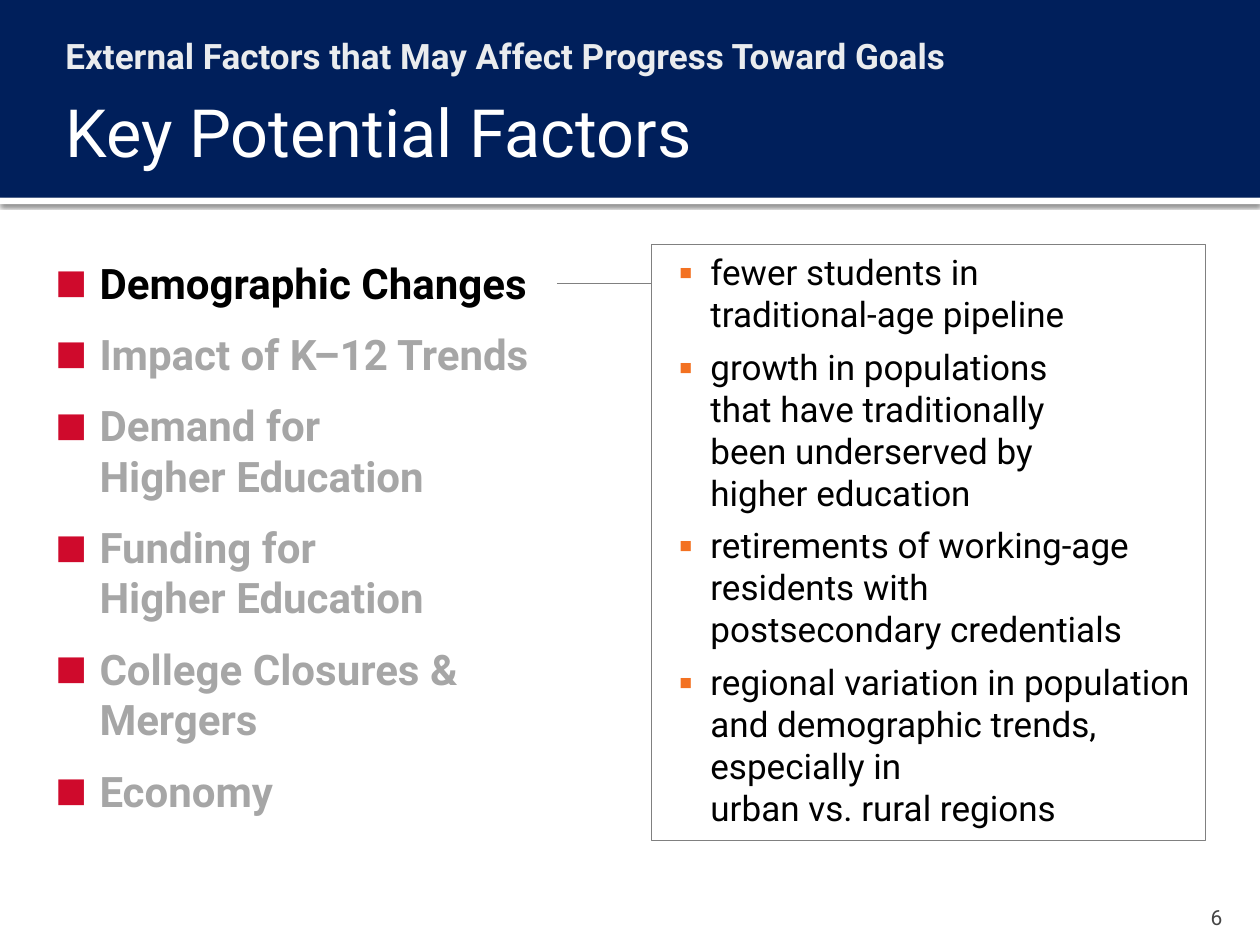
"""Build the Key Potential Factors slide."""
from dataclasses import dataclass

from lxml import etree
from pptx import Presentation
from pptx.dml.color import RGBColor
from pptx.enum.shapes import MSO_CONNECTOR, MSO_SHAPE
from pptx.enum.text import MSO_ANCHOR, MSO_AUTO_SIZE, PP_ALIGN
from pptx.oxml.ns import qn
from pptx.util import Inches, Length, Pt

RECT = MSO_SHAPE.RECTANGLE
LINE = MSO_CONNECTOR.STRAIGHT
TOP, MIDDLE, BOTTOM = MSO_ANCHOR.TOP, MSO_ANCHOR.MIDDLE, MSO_ANCHOR.BOTTOM
LEFT, RIGHT = PP_ALIGN.LEFT, PP_ALIGN.RIGHT
GROW = MSO_AUTO_SIZE.SHAPE_TO_FIT_TEXT


@dataclass(frozen=True)
class Theme:
    """Colours and type sizes of the slide."""
    font: str = "Roboto"
    navy: str = "001F5B"
    white: str = "FFFFFF"
    black: str = "000000"
    pale: str = "EAECEE"
    muted: str = "A6A6A6"
    dark: str = "454545"
    rule: str = "808080"
    red: str = "CF0A2C"
    orange: str = "F37121"
    title: int = 38
    topic: int = 24
    detail: int = 20
    number: int = 12


@dataclass(frozen=True)
class Box:
    """Place of an element in inches."""
    left: float
    top: float
    width: float
    height: float

    def emu(self) -> list[Length]:
        """Return the place as lengths."""
        return [Inches(v) for v in (self.left, self.top, self.width, self.height)]


@dataclass(frozen=True)
class Style:
    """Look of a run of text."""
    size: int
    color: str
    bold: bool = False


@dataclass(frozen=True)
class Bullet:
    """Mark, indent and spacing of a list item."""
    mark: str
    color: str
    scale: int
    left: float
    hang: float
    before: int = 0
    after: int = 0


T = Theme()
TOPIC = Bullet("■", T.red, 80, 0.48, 0.35, before=12)
DETAIL = Bullet("▪", T.orange, 100, 0.37, 0.25, after=6)
ACTIVE = Style(T.topic, T.black, True)
MUTED = Style(T.topic, T.muted, True)
PLAIN = Style(T.detail, T.black)
TOPICS = [
    ("Demographic Changes", ACTIVE),
    ("Impact of K–12 Trends", MUTED),
    ("Demand for \nHigher Education", MUTED),
    ("Funding for \nHigher Education", MUTED),
    ("College Closures & Mergers", MUTED),
    ("Economy", MUTED),
]
DETAILS = [
    "fewer students in \ntraditional-age pipeline",
    "growth in populations \nthat have traditionally \nbeen underserved by \nhigher education",
    "retirements of working-age residents with \npostsecondary credentials",
    "regional variation in population and demographic trends, especially in \nurban vs. rural regions",
]


def rgb(color: str) -> RGBColor:
    """Turn a hex string into a colour."""
    return RGBColor.from_string(color)


def band(slide, box: Box, color: str):
    """Draw a filled strip without outline."""
    shape = slide.shapes.add_shape(RECT, *box.emu())
    shape.shadow.inherit = False
    shape.fill.solid()
    shape.fill.fore_color.rgb = rgb(color)
    shape.line.fill.background()
    return shape


def shade(shape, color: str, alpha: int, blur: float, dist: float) -> None:
    """Cast a soft shadow straight down."""
    effects = shape._element.spPr.find(qn("a:effectLst"))
    outer = etree.SubElement(effects, qn("a:outerShdw"), blurRad=str(Pt(blur)),
                             dist=str(Pt(dist)), dir="5400000", rotWithShape="0")
    tint = etree.SubElement(outer, qn("a:srgbClr"), val=color)
    etree.SubElement(tint, qn("a:alpha"), val=str(alpha * 1000))


def setup(frame, inset: tuple, anchor=TOP) -> None:
    """Set wrapping, insets and anchor of a text frame."""
    frame.word_wrap = True
    frame.vertical_anchor = anchor
    sides = [Inches(v) for v in inset]
    frame.margin_left, frame.margin_top, frame.margin_right, frame.margin_bottom = sides


def write(para, text: str, style: Style, align=LEFT) -> None:
    """Fill a paragraph with styled runs, one for each line."""
    para.alignment = align
    for row, part in enumerate(text.split("\n")):
        if row:
            para.add_line_break()
        run = para.add_run()
        run.text = part
        run.font.name = T.font
        run.font.size = Pt(style.size)
        run.font.bold = style.bold
        run.font.color.rgb = rgb(style.color)


def mark(para, bullet: Bullet) -> None:
    """Give a paragraph its bullet and spacing."""
    para.space_before, para.space_after = Pt(bullet.before), Pt(bullet.after)
    props = para._p.get_or_add_pPr()
    props.set("marL", str(Inches(bullet.left)))
    props.set("indent", str(-Inches(bullet.hang)))
    tint = etree.SubElement(props, qn("a:buClr"))
    etree.SubElement(tint, qn("a:srgbClr"), val=bullet.color)
    etree.SubElement(props, qn("a:buSzPct"), val=str(bullet.scale * 1000))
    etree.SubElement(props, qn("a:buFont"), typeface=T.font)
    etree.SubElement(props, qn("a:buChar"), char=bullet.mark)


def fill_list(frame, items: list[tuple[str, Style]], bullet: Bullet) -> None:
    """Write a bulleted list into a text frame."""
    for row, (text, style) in enumerate(items):
        para = frame.add_paragraph() if row else frame.paragraphs[0]
        write(para, text, style)
        mark(para, bullet)


def label(slide, box: Box, text: str, style: Style, inset: tuple, anchor=TOP, align=LEFT) -> None:
    """Add a single line of text."""
    frame = slide.shapes.add_textbox(*box.emu()).text_frame
    setup(frame, inset, anchor)
    write(frame.paragraphs[0], text, style, align)


def main() -> None:
    """Build and save the slide."""
    deck = Presentation()
    deck.slide_width, deck.slide_height = Inches(10), Inches(7.5)
    slide = deck.slides.add_slide(deck.slide_layouts[6])

    shade(band(slide, Box(0, 1.57, 10, 0.05), T.white), T.black, 60, 2.5, 0.8)
    band(slide, Box(0, 0, 10, 1.57), T.navy)
    label(slide, Box(9, 7.08, 0.8, 0.3), "6", Style(T.number, T.dark),
          (0.1, 0.05, 0.1, 0), BOTTOM, RIGHT)

    topics = slide.shapes.add_textbox(*Box(0.25, 1.94, 4.58, 5.06).emu()).text_frame
    setup(topics, (0.06, 0.1, 0.1, 0.05))
    fill_list(topics, TOPICS, TOPIC)

    label(slide, Box(0.33, 0.17, 9.34, 0.5),
          "External Factors that May Affect Progress Toward Goals",
          Style(T.detail, T.pale, True), (0.19, 0.1, 0.1, 0.05))
    label(slide, Box(0.42, 0.58, 9.34, 0.92), "Key Potential Factors",
          Style(T.title, T.white), (0.1, 0.05, 0.05, 0.05), MIDDLE)

    panel = slide.shapes.add_shape(RECT, *Box(5.17, 1.94, 4.4, 4.73).emu())
    panel.shadow.inherit = False
    panel.fill.background()
    panel.line.color.rgb = rgb(T.rule)
    panel.line.width = Pt(0.75)
    setup(panel.text_frame, (0.1, 0.05, 0.1, 0.05))
    panel.text_frame.auto_size = GROW
    fill_list(panel.text_frame, [(text, PLAIN) for text in DETAILS], DETAIL)

    link = slide.shapes.add_connector(LINE, Inches(4.42), Inches(2.25), Inches(5.17), Inches(2.25))
    link.line.color.rgb = rgb(T.rule)
    link.line.width = Pt(0.5)
    etree.SubElement(link._element.spPr, qn("a:effectLst"))
    deck.save("out.pptx")


if __name__ == "__main__":
    main()
